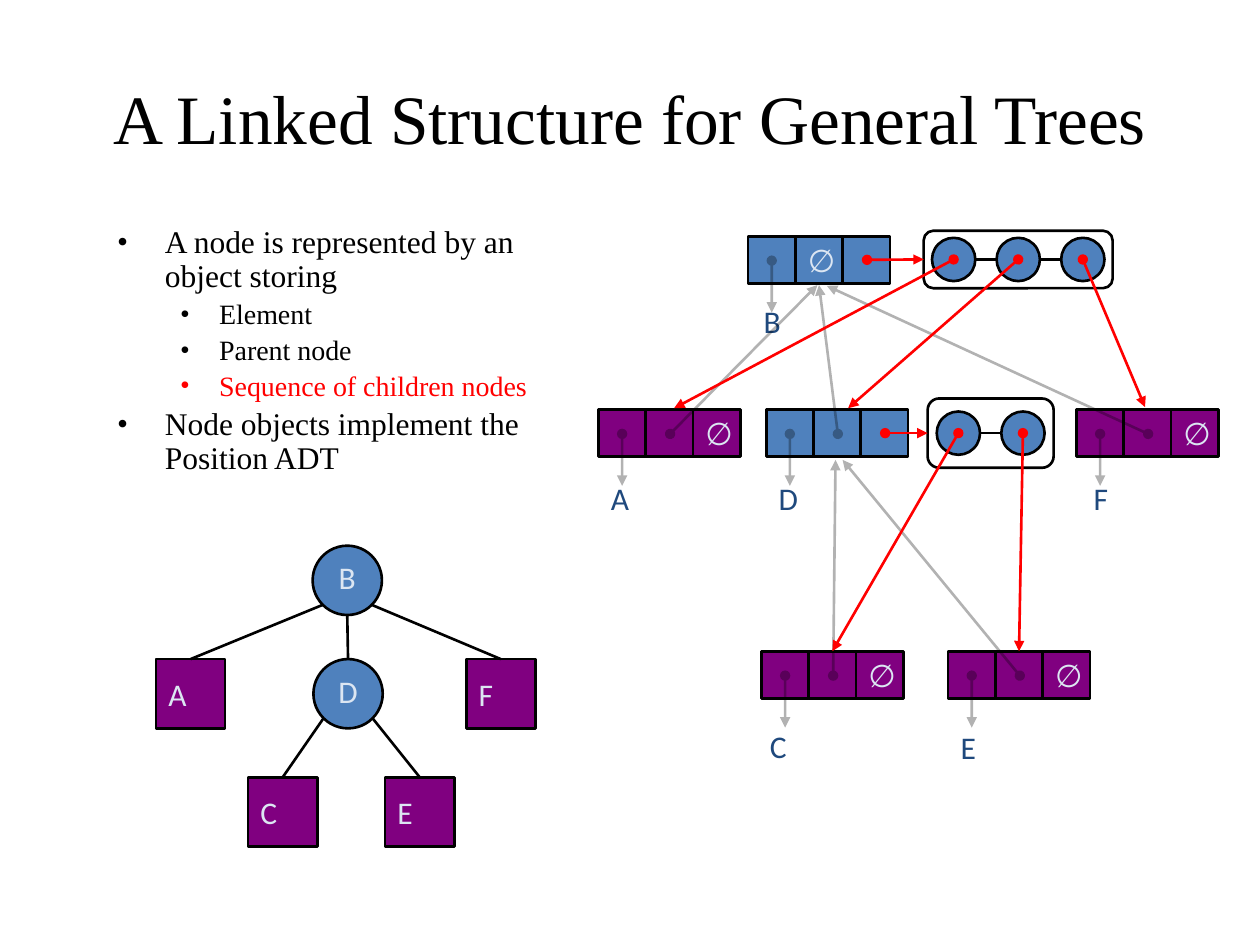
from math import sqrt

from lxml.etree import SubElement
from pptx import Presentation
from pptx.dml.color import RGBColor
from pptx.enum.shapes import MSO_CONNECTOR as LINK, MSO_SHAPE as SHAPE
from pptx.enum.text import MSO_ANCHOR as ANCHOR, PP_ALIGN as ALIGN
from pptx.oxml.ns import qn
from pptx.util import Inches, Pt

BLACK = RGBColor(0x00, 0x00, 0x00)
RED = RGBColor(0xFF, 0x00, 0x00)
BLUE = RGBColor(0x4F, 0x81, 0xBD)
PURPLE = RGBColor(0x80, 0x00, 0x80)
PALE = RGBColor(0xDC, 0xE6, 0xF2)
NAVY = RGBColor(0x1F, 0x49, 0x7D)
SERIF, SANS = "Times New Roman", "Calibri"
TOP, LEFT = 0, 1

# The slide is a grid of 80 columns by 60 rows, each an eighth of an inch.
COLUMNS, ROWS = 80, 60
CELL = 3
NODE = 4.4
BEAD, BEAD_PITCH = 2.75, 4.1


def grid(*lengths):
    return [Inches(length / 8) for length in lengths]


def shift(origin, dx, dy):
    return origin[0] + dx, origin[1] + dy


def write(frame, text, size=18, font=SANS, color=BLACK, align=ALIGN.LEFT,
          anchor=ANCHOR.TOP, wrap=False, paragraph=None):
    """Put text in the frame's first paragraph, or in the one given."""
    frame.word_wrap = wrap
    frame.vertical_anchor = anchor
    paragraph = paragraph or frame.paragraphs[0]
    paragraph.alignment = align
    run = paragraph.add_run()
    run.text = text
    run.font.size, run.font.name = Pt(size), font
    run.font.color.rgb = color
    return paragraph


def outlined(slide, kind, at, size, fill=None, text=None, align=ALIGN.LEFT):
    shape = slide.shapes.add_shape(kind, *grid(*at, *size))
    shape.shadow.inherit = False
    if fill is None:
        shape.fill.background()
    else:
        shape.fill.solid()
        shape.fill.fore_color.rgb = fill
    shape.line.color.rgb = BLACK
    shape.line.width = Pt(1.5)
    if text:
        write(shape.text_frame, text, color=PALE, align=align,
              anchor=ANCHOR.MIDDLE)
    return shape


def connect(slide, start, end, color=BLACK, arrow=False, faint=False):
    """Draw a line; its end is a grid point or a (shape, side) pair."""
    joined = not isinstance(end[0], (int, float))
    line = slide.shapes.add_connector(
        LINK.STRAIGHT, *grid(*start, *(start if joined else end)))
    if joined:
        line.end_connect(*end)
    line.line.color.rgb = color
    line.line.width = Pt(1.5)
    properties = line._element.spPr
    stroke = properties.find(qn("a:ln"))
    if faint:
        tint = stroke.find(".//" + qn("a:srgbClr"))
        SubElement(tint, qn("a:alpha"), val="30000")
    if arrow:
        SubElement(stroke, qn("a:headEnd"), type="oval")
        SubElement(stroke, qn("a:tailEnd"), type="triangle")
    SubElement(properties, qn("a:effectLst"))


def title(slide, box):
    heading = slide.shapes.add_textbox(*grid(*box))
    write(heading.text_frame, "A Linked Structure for General Trees",
          size=39.6, font=SERIF, align=ALIGN.CENTER, anchor=ANCHOR.MIDDLE,
          wrap=True)


def bullets(slide, box):
    points = [
        (0, "A node is represented by an object storing", BLACK),
        (1, "Element", BLACK),
        (1, "Parent node", BLACK),
        (1, "Sequence of children nodes", RED),
        (0, "Node objects implement the Position ADT", BLACK),
    ]
    levels = [(18, 0.38, 0.38), (16, 0.81, 0.31)]
    frame = slide.shapes.add_textbox(*grid(*box)).text_frame
    for index, (level, text, color) in enumerate(points):
        size, margin, hanging = levels[level]
        paragraph = frame.add_paragraph() if index else frame.paragraphs[0]
        write(frame, text, size=size, font=SERIF, color=color, wrap=True,
              paragraph=paragraph)
        paragraph.level = level
        paragraph.line_spacing = 0.9
        paragraph.space_before = Pt(size * 0.2)
        properties = paragraph._p.get_or_add_pPr()
        properties.set("marL", str(Inches(margin)))
        properties.set("indent", str(-Inches(hanging)))
        SubElement(properties, qn("a:buFont"), typeface=SERIF)
        SubElement(properties, qn("a:buChar"), char="•")


def tree(slide, origin):
    """Abstract tree: circles are inner nodes, squares are leaves."""
    inner = {"B": (9.95, 0), "D": (10, 7.2)}
    leaves = {"A": (0, 7.2), "F": (19.7, 7.2),
              "C": (5.85, 14.7), "E": (14.55, 14.7)}
    nodes = {}
    for name, at in inner.items():
        node = outlined(slide, SHAPE.OVAL, shift(origin, *at), (NODE, NODE),
                        BLUE, name, ALIGN.CENTER)
        frame = node.text_frame
        frame.margin_left = frame.margin_right = frame.margin_top = 0
        nodes[name] = node
    for name, at in leaves.items():
        nodes[name] = outlined(slide, SHAPE.RECTANGLE, shift(origin, *at),
                               (NODE, NODE), PURPLE, name)

    radius = NODE / 2
    slant = radius / sqrt(2)
    rims = {"left": (-slant, slant), "bottom": (0, radius),
            "right": (slant, slant)}
    for parent, rim, child in [("B", "left", "A"), ("B", "bottom", "D"),
                               ("B", "right", "F"), ("D", "left", "C"),
                               ("D", "right", "E")]:
        center = shift(shift(origin, *inner[parent]), radius, radius)
        connect(slide, shift(center, *rims[rim]), (nodes[child], TOP))


def record(slide, at, fill, empty):
    """Three cells for element, parent and children; returns the cells."""
    return [outlined(slide, SHAPE.RECTANGLE, shift(at, i * CELL, 0),
                     (CELL, CELL), fill, "∅" if i == empty else None)
            for i in range(3)]


def sequence(slide, at, width, height, count):
    """Chain of beads in a rounded box; returns the box and bead centres."""
    frame = outlined(slide, SHAPE.ROUNDED_RECTANGLE, at, (width, height))
    first = (width - (count - 1) * BEAD_PITCH) / 2
    centers = [shift(at, first + i * BEAD_PITCH, height / 2)
               for i in range(count)]
    connect(slide, centers[0], centers[-1])
    for center in centers:
        outlined(slide, SHAPE.OVAL, shift(center, -BEAD / 2, -BEAD / 2),
                 (BEAD, BEAD), BLUE)
    return frame, centers


def linked_structure(slide, origin):
    # Record position, fill, empty cell, and label offset from the record
    layout = {
        "B": ((9.5, 0.35), BLUE, 1, (0.2, 3.8)),
        "A": ((0, 11.35), PURPLE, 2, (0, 4)),
        "D": ((10.65, 11.35), BLUE, None, (0, 4)),
        "F": ((30.35, 11.35), PURPLE, 2, (0.3, 4)),
        "C": ((10.35, 26.7), PURPLE, 2, (-0.25, 4.4)),
        "E": ((22.2, 26.7), PURPLE, 2, (0, 4.5)),
    }
    places = {name: shift(origin, *row[0]) for name, row in layout.items()}
    chains = {"B": sequence(slide, shift(origin, 20.65, 0), 12, 3.65, 3),
              "D": sequence(slide, shift(origin, 20.9, 10.65), 8, 4.4, 2)}
    cells = {}
    for name, (_, fill, empty, offset) in layout.items():
        cells[name] = record(slide, places[name], fill, empty)
        label = slide.shapes.add_textbox(
            *grid(*shift(places[name], *offset), CELL, 3.5))
        write(label.text_frame, name, color=NAVY)

    for at in places.values():
        dot = shift(at, 1.5, 1.55)
        connect(slide, dot, shift(dot, 0, 3.3), arrow=True, faint=True)

    parent_tips = {"A": (13.9, 3.45), "D": (14, 3.45), "F": (14.5, 3.5),
                   "C": (15.05, 14.55), "E": (15.5, 14.55)}
    for name, tip in parent_tips.items():
        connect(slide, shift(places[name], 4.55, 1.55), shift(origin, *tip),
                arrow=True, faint=True)

    child_tips = {"A": shift(origin, 4.8, 11.27),
                  "D": shift(origin, 15.85, 11.27),
                  "F": shift(origin, 34.7, 11.2),
                  "C": (cells["C"][1], TOP), "E": (cells["E"][1], TOP)}
    for parent, children in {"B": "ADF", "D": "CE"}.items():
        frame, beads = chains[parent]
        connect(slide, shift(places[parent], 7.55, 1.5), (frame, LEFT), RED,
                arrow=True)
        for bead, child in zip(beads, children):
            connect(slide, bead, child_tips[child], RED, arrow=True)


def main():
    deck = Presentation()
    deck.slide_width, deck.slide_height = grid(COLUMNS, ROWS)
    slide = deck.slides.add_slide(deck.slide_layouts[6])
    title(slide, (4, 2.4, 72, 10))
    bullets(slide, (6.65, 14, 28, 18.65))
    tree(slide, (9.9, 34.65))
    linked_structure(slide, (38, 14.65))
    deck.save("out.pptx")


if __name__ == "__main__":
    main()
